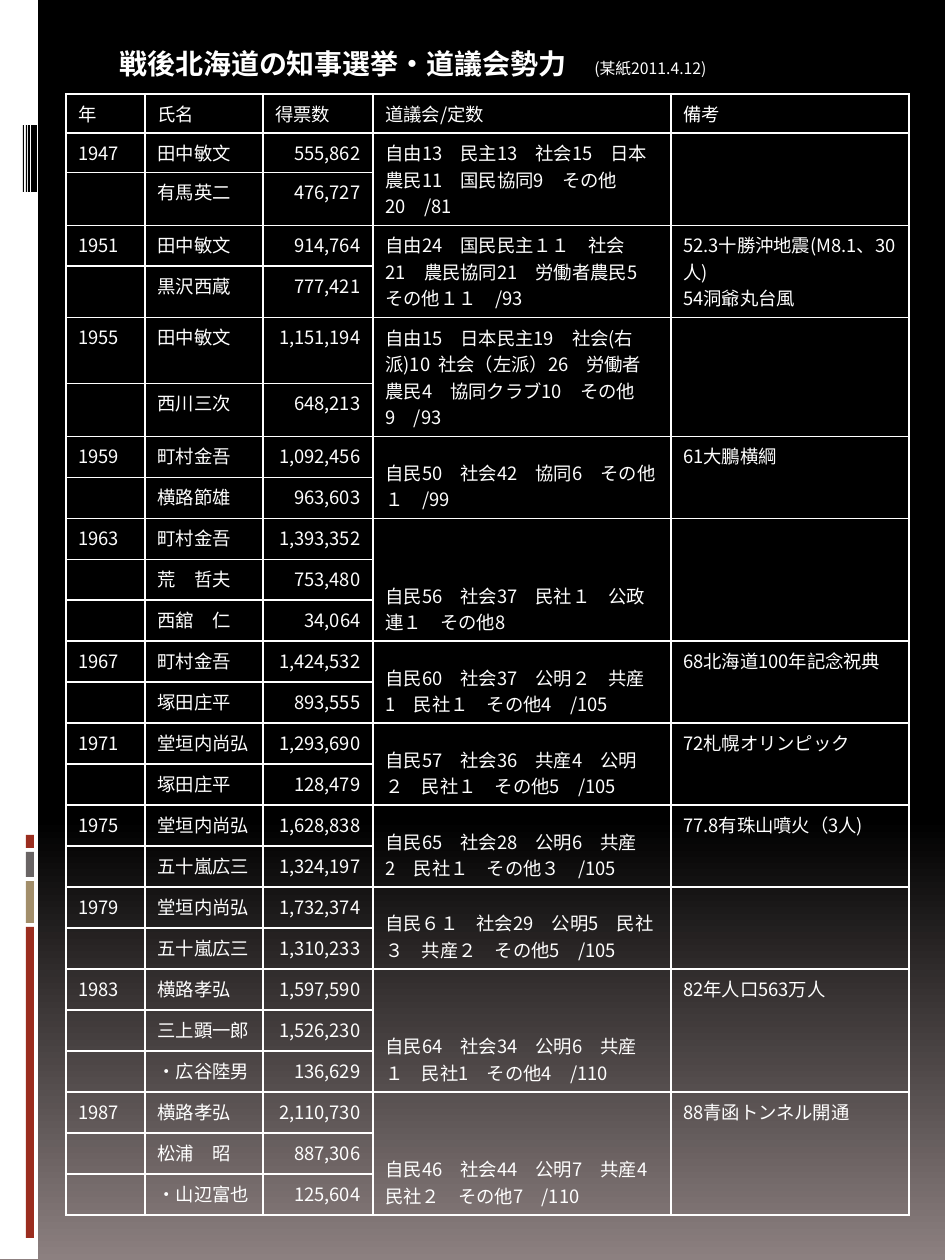
from lxml import etree
from pptx import Presentation
from pptx.dml.color import RGBColor
from pptx.enum.shapes import MSO_SHAPE
from pptx.enum.text import MSO_ANCHOR, MSO_AUTO_SIZE, PP_ALIGN
from pptx.oxml.ns import qn
from pptx.util import Pt

RECT = MSO_SHAPE.RECTANGLE
TOP, MIDDLE, BOTTOM = MSO_ANCHOR.TOP, MSO_ANCHOR.MIDDLE, MSO_ANCHOR.BOTTOM
LEFT, RIGHT = PP_ALIGN.LEFT, PP_ALIGN.RIGHT
WHITE = RGBColor(0xFF, 0xFF, 0xFF)
BLACK = RGBColor(0, 0, 0)
TAUPE = RGBColor(0x8C, 0x80, 0x80)
RED = RGBColor(0x9B, 0x2D, 0x1F)
TAN = RGBColor(0xA2, 0x8E, 0x6A)
GRAY = RGBColor(0x69, 0x64, 0x64)
FONT = "Noto Sans CJK JP"
PX = 914400 / 126

HEADS = ["年", "氏名", "得票数", "道議会/定数", "備考"]
# year, assembly seats, note, candidates with votes
POLLS = [
    ("1947", "自由13　民主13　社会15　日本農民11　国民協同9　その他20　/81", "",
     [("田中敏文", "555,862"), ("有馬英二", "476,727")]),
    ("1951", "自由24　国民民主１１　社会21　農民協同21　労働者農民5　その他１１　/93",
     "52.3十勝沖地震(M8.1、30人)\n54洞爺丸台風",
     [("田中敏文", "914,764"), ("黒沢西蔵", "777,421")]),
    ("1955", "自由15　日本民主19　社会(右派)10  社会（左派）26　労働者農民4　協同クラブ10　その他9　/93", "",
     [("田中敏文", "1,151,194"), ("西川三次", "648,213")]),
    ("1959", "自民50　社会42　協同6　その他１　/99", "61大鵬横綱",
     [("町村金吾", "1,092,456"), ("横路節雄", "963,603")]),
    ("1963", "自民56　社会37　民社１　公政連１　その他8", "",
     [("町村金吾", "1,393,352"), ("荒　哲夫", "753,480"), ("西舘　仁", "34,064")]),
    ("1967", "自民60　社会37　公明２　共産1　民社１　その他4　/105", "68北海道100年記念祝典",
     [("町村金吾", "1,424,532"), ("塚田庄平", "893,555")]),
    ("1971", "自民57　社会36　共産4　公明２　民社１　その他5　/105", "72札幌オリンピック",
     [("堂垣内尚弘", "1,293,690"), ("塚田庄平", "128,479")]),
    ("1975", "自民65　社会28　公明6　共産2　民社１　その他３　/105", "77.8有珠山噴火（3人)",
     [("堂垣内尚弘", "1,628,838"), ("五十嵐広三", "1,324,197")]),
    ("1979", "自民６１　社会29　公明5　民社３　共産２　その他5　/105", "",
     [("堂垣内尚弘", "1,732,374"), ("五十嵐広三", "1,310,233")]),
    ("1983", "自民64　社会34　公明6　共産１　民社1　その他4　/110　", "82年人口563万人",
     [("横路孝弘", "1,597,590"), ("三上顕一郎", "1,526,230"), ("・広谷陸男", "136,629")]),
    ("1987", "自民46　社会44　公明7　共産4\n民社２　その他7　/110", "88青函トンネル開通",
     [("横路孝弘", "2,110,730"), ("松浦　昭", "887,306"), ("・山辺富也", "125,604")]),
]
BARS = [
    (0, 0, 38, 1259, WHITE),
    (26, 927, 8, 311, RED), (26, 881, 8, 42, TAN),
    (26, 852, 8, 25, GRAY), (26, 835, 8, 13, RED),
    (31, 125, 6, 67, BLACK), (28, 125, 2, 67, BLACK),
    (26, 125, 1, 67, BLACK), (23, 125, 1, 67, BLACK),
]
WIDTHS = [79, 118, 110, 298, 238]
HEIGHTS = [39, 39, 53, 41, 51, 66, 53] + [41] * 19


def box(*sides):
    """Turn px lengths into EMU."""
    return [round(side * PX) for side in sides]


def style(run, size, bold=False):
    font = run.font
    font.size, font.bold, font.name = Pt(size), bold, FONT
    font.color.rgb = WHITE
    etree.SubElement(run._r.get_or_add_rPr(), qn("a:ea"), typeface=FONT)


deck = Presentation()
deck.slide_width, deck.slide_height = box(945, 1260)
slide = deck.slides.add_slide(deck.slide_layouts[5])

fill = slide.background.fill
fill.gradient()
fill.gradient_angle = 270
for stop, place, color in zip(fill.gradient_stops, (0.65, 1), (BLACK, TAUPE)):
    stop.position = place
    stop.color.rgb = color

for *frame, color in BARS:
    bar = slide.shapes.add_shape(RECT, *box(*frame))
    bar.shadow.inherit = False
    bar.fill.solid()
    bar.fill.fore_color.rgb = color
    bar.line.fill.background()

# Title with its source
title = slide.shapes.title
title.left, title.top, title.width, title.height = box(107, 44, 615, 39)
frame = title.text_frame
frame.word_wrap = True
frame.auto_size = MSO_AUTO_SIZE.NONE
frame.vertical_anchor = MIDDLE
frame.text = "戦後北海道の知事選挙・道議会勢力　"
line = frame.paragraphs[0]
line.alignment = LEFT
line.add_run().text = "(某紙2011.4.12)"
style(line.runs[0], 16, True)
style(line.runs[1], 9)

# Table of elections
grid = slide.shapes.add_table(
    len(HEIGHTS), len(WIDTHS), *box(66, 94, sum(WIDTHS), sum(HEIGHTS))).table
grid.first_row = grid.horz_banding = False
for col, width in zip(grid.columns, box(*WIDTHS)):
    col.width = width
for row, height in zip(grid.rows, box(*HEIGHTS)):
    row.height = height

rows = [HEADS]
for year, seats, note, runners in POLLS:
    first = len(rows)
    for name, votes in runners:
        rows.append(["", name, votes, "", ""])
    rows[first][0] = year
    rows[first][3:] = [seats, note]
    for c in (3, 4):
        grid.cell(first, c).merge(grid.cell(len(rows) - 1, c))

for r, row in enumerate(rows):
    for c, text in enumerate(row):
        cell = grid.cell(r, c)
        cell.text = text
        cell.vertical_anchor = BOTTOM if r and c == 3 else TOP
        cell.fill.background()
        for para in cell.text_frame.paragraphs:
            para.alignment = RIGHT if r and c == 2 else LEFT
            for run in para.runs:
                style(run, 10.5)
            if not para.runs:
                etree.SubElement(para._p, qn("a:endParaRPr"), sz="1050")
        props = cell._tc.get_or_add_tcPr()
        for i, side in enumerate("LRTB"):
            edge = etree.Element(qn("a:ln" + side), w=str(Pt(1)))
            paint = etree.SubElement(edge, qn("a:solidFill"))
            etree.SubElement(paint, qn("a:srgbClr"), val=str(WHITE))
            props.insert(i, edge)

deck.save("out.pptx")
